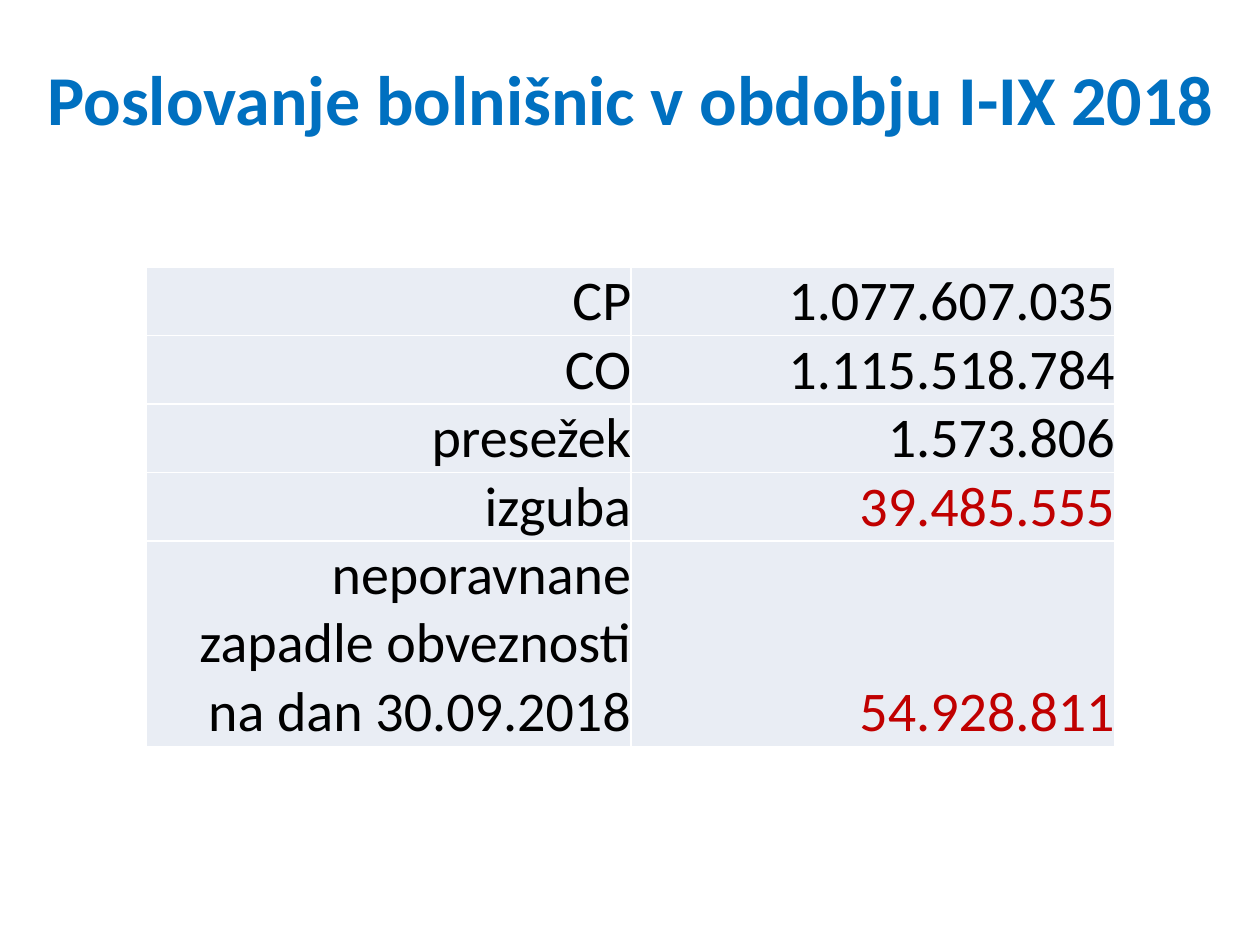
"""Build a title slide with a two-column table of hospital results."""
from typing import NamedTuple

from lxml import etree
from pptx import Presentation
from pptx.dml.color import RGBColor
from pptx.enum import text as t
from pptx.oxml import ns
from pptx.util import Pt

FONT = "Calibri"
BLUE, BLACK, RED = "0070C0", "000000", "C00000"
PALE, WHITE = "E9EDF4", "FFFFFF"
MID, LOW = t.MSO_ANCHOR.MIDDLE, t.MSO_ANCHOR.BOTTOM


class Row(NamedTuple):
    """One table line."""
    label: str
    value: str
    color: str = BLACK
    anchor: t.MSO_ANCHOR = MID
    height: float = 33.12


ROWS = [
    Row("CP", "1.077.607.035"),
    Row("CO", "1.115.518.784"),
    Row("presežek", "1.573.806"),
    Row("izguba", "39.485.555", RED),
    Row("neporavnane zapadle obveznosti na dan 30.09.2018", "54.928.811",
        RED, LOW, 79.2),
]


def paint(target, color: str) -> None:
    """Give a fill a solid colour."""
    target.solid()
    target.fore_color.rgb = RGBColor.from_string(color)


def write(frame, words: str, *, size: float, color: str = BLACK,
          bold: bool = False, align=t.PP_ALIGN.RIGHT) -> None:
    """Put formatted text in a text frame."""
    para = frame.paragraphs[0]
    para.alignment = align
    run = para.add_run()
    run.text = words
    run.font.name, run.font.size, run.font.bold = FONT, Pt(size), bold
    paint(run.font.fill, color)


def edge(cell, color: str, width: float) -> None:
    """Draw the four borders of a cell."""
    props = cell._tc.get_or_add_tcPr()
    for spot, side in enumerate(("lnL", "lnR", "lnT", "lnB")):
        line = etree.Element(ns.qn(f"a:{side}"), w=str(Pt(width)))
        fill = etree.SubElement(line, ns.qn("a:solidFill"))
        etree.SubElement(fill, ns.qn("a:srgbClr"), val=color)
        props.insert(spot, line)


def fill_cell(cell, words: str, color: str, anchor) -> None:
    """Format one table cell and write its text."""
    cell.margin_left = cell.margin_right = Pt(0)
    cell.margin_top = cell.margin_bottom = Pt(0)
    cell.vertical_anchor = anchor
    paint(cell.fill, PALE)
    edge(cell, WHITE, 1)
    write(cell.text_frame, words, size=32, color=color)


def add_title(slide, words: str) -> None:
    """Place and format the slide title."""
    title = slide.shapes.title
    title.left, title.top = Pt(18.72), Pt(13.68)
    title.width, title.height = Pt(683.28), Pt(83.52)
    frame = title.text_frame
    frame.word_wrap = True
    frame.auto_size = t.MSO_AUTO_SIZE.NONE
    frame.vertical_anchor = MID
    write(frame, words, size=40, color=BLUE, bold=True,
          align=t.PP_ALIGN.CENTER)


def add_grid(slide, rows: list[Row]) -> None:
    """Add the table of results."""
    holder = slide.shapes.add_table(len(rows), 2, Pt(83.52), Pt(152.64),
                                    Pt(553.68), Pt(270))
    grid = holder.table
    grid.first_row = grid.horz_banding = False
    for col, width in zip(grid.columns, (277.2, 276.48)):
        col.width = Pt(width)
    for num, row in enumerate(rows):
        grid.rows[num].height = Pt(row.height)
        fill_cell(grid.cell(num, 0), row.label, BLACK, row.anchor)
        fill_cell(grid.cell(num, 1), row.value, row.color, LOW)
    holder.height = Pt(270)


def main() -> None:
    """Build and save the deck."""
    deck = Presentation()
    deck.slide_width, deck.slide_height = Pt(720), Pt(540)
    slide = deck.slides.add_slide(deck.slide_layouts[5])
    add_title(slide, "Poslovanje bolnišnic v obdobju I-IX 2018")
    add_grid(slide, ROWS)
    deck.save("out.pptx")


if __name__ == "__main__":
    main()
